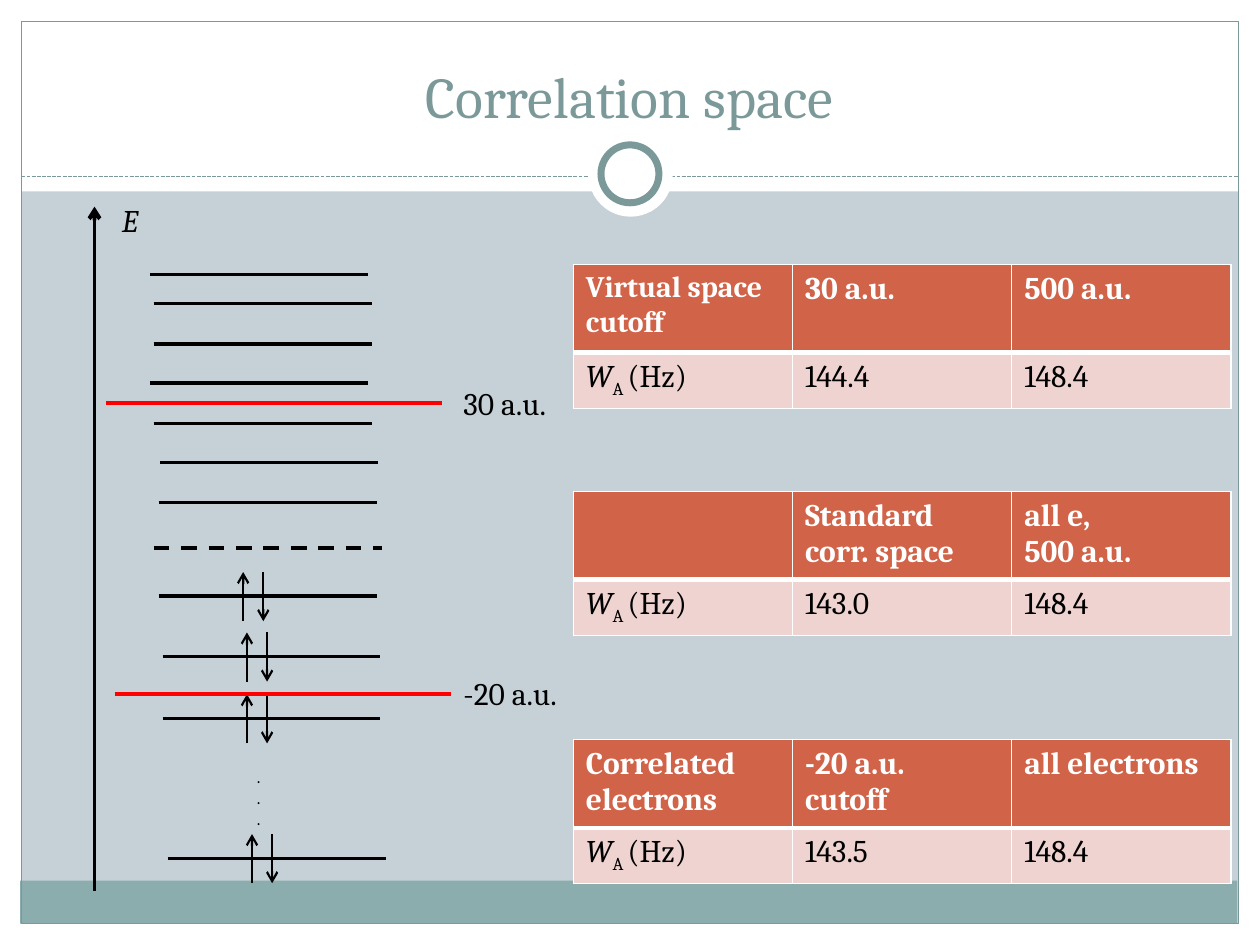
from dataclasses import dataclass
from typing import Optional

import lxml.etree
import pptx
import pptx.dml.color
import pptx.enum.dml
import pptx.enum.shapes
import pptx.enum.text
import pptx.oxml.ns
import pptx.util

RGB = pptx.dml.color.RGBColor
SHAPE = pptx.enum.shapes.MSO_SHAPE
DASH = pptx.enum.dml.MSO_LINE
ALIGN = pptx.enum.text.PP_ALIGN
ANCHOR = pptx.enum.text.MSO_ANCHOR
AUTO = pptx.enum.text.MSO_AUTO_SIZE
qn = pptx.oxml.ns.qn

WHITE, BLACK, RED = RGB(255, 255, 255), RGB(0, 0, 0), RGB(255, 0, 0)
BACKGROUND = RGB(0xC5, 0xD1, 0xD7)
TEAL = RGB(0x7C, 0x99, 0x9A)
FOOTER = RGB(0x8C, 0xAD, 0xAE)
HEADER = RGB(0xD1, 0x63, 0x49)
BODY = RGB(0xEE, 0xD3, 0xD0)
FONT = "Cambria"
EMU_PER_PX = 9144  # 100 px to the inch
LEVEL_WIDTH = 173
CUTOFF_WIDTH = 267
COLUMN_WIDTH = 174
ROW_HEIGHTS = (70, 41)


@dataclass(frozen=True)
class Box:
    x: int
    y: int
    w: int
    h: int
    fill: Optional[RGB] = None
    line: Optional[RGB] = None
    width: float = 0.75
    kind: int = SHAPE.RECTANGLE


@dataclass(frozen=True)
class Line:
    x1: int
    y1: int
    x2: int
    y2: int
    width: float = 1.75
    color: RGB = BLACK
    dash: Optional[int] = None
    arrow: bool = False


@dataclass(frozen=True)
class Label:
    x: int
    y: int
    w: int
    h: int
    text: str
    size: int = 18
    italic: bool = False


@dataclass(frozen=True)
class ResultTable:
    y: int
    headers: tuple[str, str, str]
    values: tuple[str, str]
    first_size: int = 18


FRAME = [
    Box(0, 733, 1000, 17, WHITE),
    Box(0, 0, 1000, 152, WHITE),
    Box(0, 0, 17, 750, WHITE),
    Box(983, 0, 17, 750, WHITE),
    Box(16, 699, 966, 34, FOOTER),
    Box(17, 17, 966, 716, line=TEAL),
]
RINGS = [
    Box(467, 105, 67, 67, WHITE, kind=SHAPE.OVAL),
    Box(477, 115, 46, 46, WHITE, TEAL, 4, SHAPE.OVAL),
]
VIRTUAL_LEVELS = [(119, 218), (122, 241), (122, 273), (119, 304),
                  (122, 336), (127, 367), (126, 399)]
OCCUPIED_LEVELS = [(126, 473), (129, 521), (129, 570), (133, 681)]
CUTOFFS = [(91, 551), (84, 320)]
LABELS = [
    Label(194, 603, 24, 61, ".\n.\n.", 10),
    Label(87, 155, 37, 40, "E", italic=True),
    Label(358, 530, 108, 40, "-20 a.u."),
    Label(358, 300, 97, 40, "30 a.u."),
]
TABLES = [
    ResultTable(210, ("Virtual space cutoff", "30 a.u.", "500 a.u."), ("144.4", "148.4"), 17),
    ResultTable(390, ("", "Standard corr. space", "all e,\n500 a.u."), ("143.0", "148.4")),
    ResultTable(587, ("Correlated electrons", "-20 a.u.\ncutoff", "all electrons"),
                ("143.5", "148.4")),
]


def px(*values: int) -> list[int]:
    return [v * EMU_PER_PX for v in values]


def draw_box(s, box: Box) -> None:
    sp = s.shapes.add_shape(box.kind, *px(box.x, box.y, box.w, box.h))
    sp.shadow.inherit = False
    if box.fill is None:
        sp.fill.background()
    else:
        sp.fill.solid()
        sp.fill.fore_color.rgb = box.fill
    if box.line is None:
        sp.line.fill.background()
    else:
        sp.line.color.rgb = box.line
        sp.line.width = pptx.util.Pt(box.width)


def draw_line(s, line: Line) -> None:
    sp = s.shapes.add_connector(pptx.enum.shapes.MSO_CONNECTOR.STRAIGHT,
                                *px(line.x1, line.y1, line.x2, line.y2))
    sp.line.color.rgb = line.color
    sp.line.width = pptx.util.Pt(line.width)
    if line.dash is not None:
        sp.line.dash_style = line.dash
    spPr = sp.element.spPr
    if line.arrow:
        lxml.etree.SubElement(spPr.find(qn("a:ln")), qn("a:tailEnd"), type="arrow")
    lxml.etree.SubElement(spPr, qn("a:effectLst"))


def add_run(p, text: str, color: RGB = BLACK, size: int = 18,
            bold: bool = False, italic: bool = False):
    r = p.add_run()
    r.text = text
    style = {"name": FONT, "size": pptx.util.Pt(size), "bold": bold, "italic": italic}
    for name, value in style.items():
        setattr(r.font, name, value)
    r.font.color.rgb = color
    return r


def write_lines(tf, text: str, **style) -> None:
    """Write one paragraph for each line of text."""
    for i, line in enumerate(text.split("\n")):
        p = tf.add_paragraph() if i else tf.paragraphs[0]
        add_run(p, line, **style)


def draw_label(s, label: Label) -> None:
    tf = s.shapes.add_textbox(*px(label.x, label.y, label.w, label.h)).text_frame
    tf.word_wrap = False
    tf.auto_size = AUTO.SHAPE_TO_FIT_TEXT
    write_lines(tf, label.text, size=label.size, italic=label.italic)


def draw_title(s, text: str) -> None:
    tf = s.shapes.add_textbox(*px(33, 25, 933, 83)).text_frame
    tf.word_wrap = True
    tf.vertical_anchor = ANCHOR.BOTTOM
    write_lines(tf, text, size=33, color=TEAL)
    tf.paragraphs[0].alignment = ALIGN.CENTER


def paint_cell(cell, fill: RGB, top: int, bottom: int) -> None:
    """Give a cell white borders (top and bottom in points) and a fill."""
    tcPr = cell._tc.get_or_add_tcPr()
    for side, width in {"L": 1, "R": 1, "T": top, "B": bottom}.items():
        ln = lxml.etree.SubElement(tcPr, qn(f"a:ln{side}"), w=str(pptx.util.Pt(width)))
        solid = lxml.etree.SubElement(ln, qn("a:solidFill"))
        lxml.etree.SubElement(solid, qn("a:srgbClr"), val=str(WHITE))
    cell.fill.solid()
    cell.fill.fore_color.rgb = fill


def draw_table(s, data: ResultTable) -> None:
    table = s.shapes.add_table(2, 3, *px(455, data.y, 3 * COLUMN_WIDTH, sum(ROW_HEIGHTS))).table
    for row, height in zip(table.rows, px(*ROW_HEIGHTS)):
        row.height = height
    for i, header in enumerate(data.headers):
        table.columns[i].width = COLUMN_WIDTH * EMU_PER_PX
        paint_cell(table.cell(0, i), HEADER, 1, 3)
        paint_cell(table.cell(1, i), BODY, 3, 1)
        if header:
            write_lines(table.cell(0, i).text_frame, header, color=WHITE, bold=True,
                        size=18 if i else data.first_size)
    p = table.cell(1, 0).text_frame.paragraphs[0]
    add_run(p, "W", italic=True)
    add_run(p, "A ")._r.get_or_add_rPr().set("baseline", "-25000")
    add_run(p, "(Hz)")
    for i, value in enumerate(data.values, start=1):
        write_lines(table.cell(1, i).text_frame, value)


def diagram_lines() -> list[Line]:
    lines = [Line(122, 435, 303, 435, 2.25, dash=DASH.DASH),
             Line(75, 707, 75, 164, 2.25, arrow=True)]
    lines += [Line(x, y, x + LEVEL_WIDTH, y) for x, y in VIRTUAL_LEVELS + OCCUPIED_LEVELS]
    for x, y in OCCUPIED_LEVELS:
        lines.append(Line(x + 67, y + 20, x + 67, y - 19, 1.25, arrow=True))
        lines.append(Line(x + 83, y - 19, x + 83, y + 20, 1.25, arrow=True))
    lines += [Line(x, y, x + CUTOFF_WIDTH, y, 2, RED) for x, y in CUTOFFS]
    return lines


def main() -> None:
    prs = pptx.Presentation()
    prs.slide_width, prs.slide_height = px(1000, 750)
    s = prs.slides.add_slide(prs.slide_layouts[6])
    s.background.fill.solid()
    s.background.fill.fore_color.rgb = BACKGROUND
    for box in FRAME:
        draw_box(s, box)
    draw_line(s, Line(17, 140, 983, 140, 0.75, TEAL, DASH.SQUARE_DOT))
    for ring in RINGS:
        draw_box(s, ring)
    draw_title(s, "Correlation space")
    for line in diagram_lines():
        draw_line(s, line)
    for label in LABELS:
        draw_label(s, label)
    for data in TABLES:
        draw_table(s, data)
    prs.save("out.pptx")


if __name__ == "__main__":
    main()
